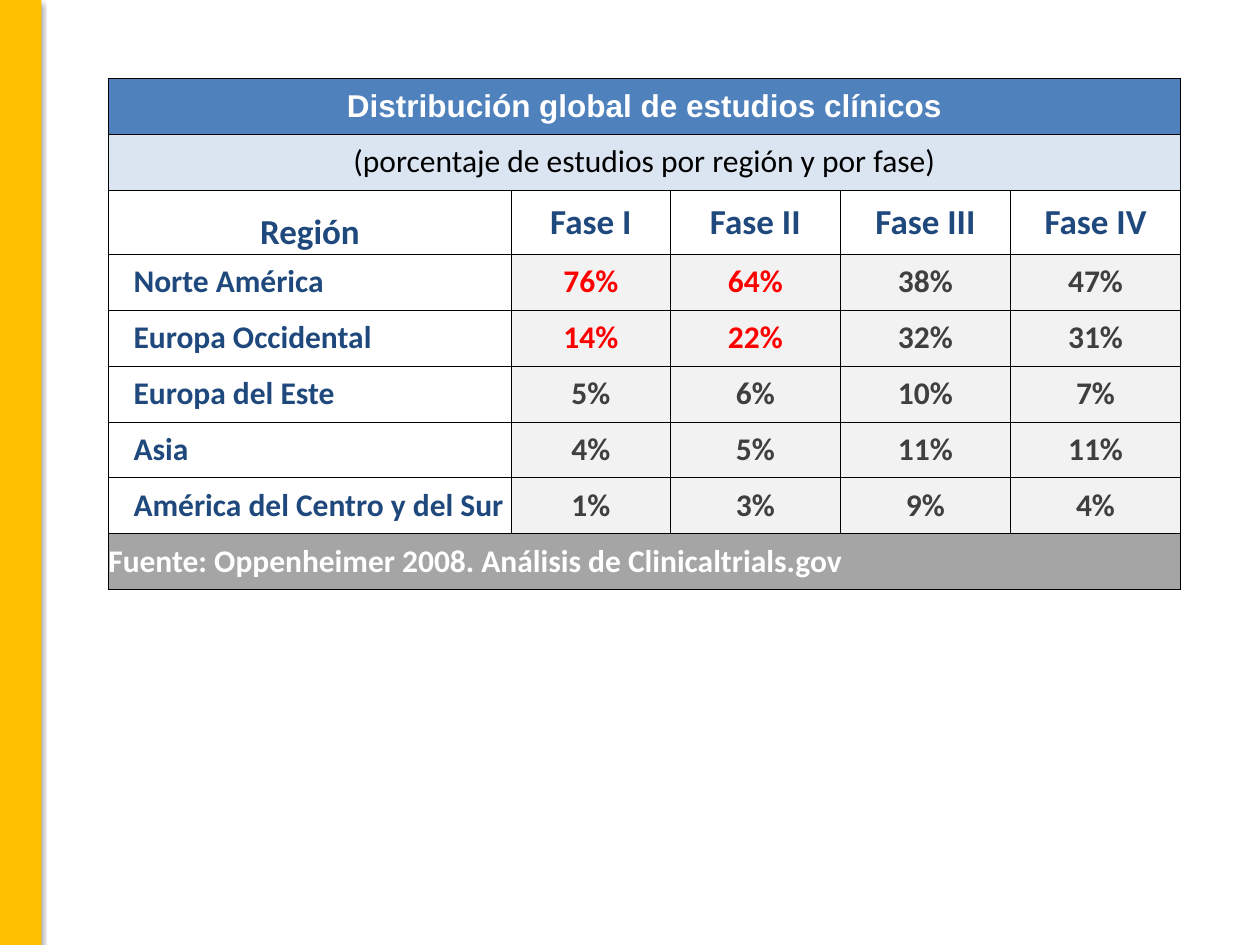
import pptx
import pptx.dml.color
import pptx.enum.shapes
import pptx.enum.text
import pptx.oxml
import pptx.oxml.ns
import pptx.util
from pptx.dml.color import RGBColor
from pptx.util import Inches

# Content
TITLE = "Distribución global de estudios clínicos"
SUBTITLE = "(porcentaje de estudios por región y por fase)"
HEADINGS = ["Región", "Fase I", "Fase II", "Fase III", "Fase IV"]
REGIONS = [
    ("Norte América", 76, 64, 38, 47),
    ("Europa Occidental", 14, 22, 32, 31),
    ("Europa del Este", 5, 6, 10, 7),
    ("Asia", 4, 5, 11, 11),
    ("América del Centro y del Sur", 1, 3, 9, 4),
]
SOURCE = "Fuente: Oppenheimer 2008. Análisis de Clinicaltrials.gov"
HIGHLIGHT_ROWS, HIGHLIGHT_COLUMNS = 2, 2

# Colours
AMBER = RGBColor(0xFF, 0xC0, 0x00)
BLUE = RGBColor(0x4F, 0x81, 0xBD)
PALE_BLUE = RGBColor(0xDB, 0xE5, 0xF1)
NAVY = RGBColor(0x1F, 0x49, 0x7D)
RED = RGBColor(0xFF, 0x00, 0x00)
DARK_GREY = RGBColor(0x3F, 0x3F, 0x3F)
GREY = RGBColor(0xA5, 0xA5, 0xA5)
PALE_GREY = RGBColor(0xF2, 0xF2, 0xF2)
WHITE = RGBColor(0xFF, 0xFF, 0xFF)
BLACK = RGBColor(0x00, 0x00, 0x00)

# Layout in inches
COLUMN_WIDTHS = [3.2, 1.26, 1.35, 1.35, 1.35]
ROW_HEIGHT, HEADING_HEIGHT = 0.444, 0.51
ROW_HEIGHTS = [ROW_HEIGHT] * 2 + [HEADING_HEIGHT] + [ROW_HEIGHT] * (len(REGIONS) + 1)
REGION_INDENT = 0.2

CENTER = pptx.enum.text.PP_ALIGN.CENTER
LEFT = pptx.enum.text.PP_ALIGN.LEFT
MIDDLE = pptx.enum.text.MSO_ANCHOR.MIDDLE
BOTTOM = pptx.enum.text.MSO_ANCHOR.BOTTOM
NAMESPACE = pptx.oxml.ns.nsdecls("a")


def add_side_band(slide, height):
    band = slide.shapes.add_shape(
        pptx.enum.shapes.MSO_SHAPE.RECTANGLE, 0, 0, Inches(0.33), height)
    band.fill.solid()
    band.fill.fore_color.rgb = AMBER
    band.line.fill.background()
    band.shadow.inherit = False
    effects = band._element.spPr.find(pptx.oxml.ns.qn("a:effectLst"))
    effects.append(pptx.oxml.parse_xml(
        f'<a:outerShdw {NAMESPACE} blurRad="{pptx.util.Pt(3.1)}" '
        f'dist="{pptx.util.Pt(1.8)}" dir="5400000" rotWithShape="0">'
        '<a:srgbClr val="000000"><a:alpha val="35000"/></a:srgbClr></a:outerShdw>'))


def add_borders(cell):
    properties = cell._tc.get_or_add_tcPr()
    for index, side in enumerate(("lnL", "lnR", "lnT", "lnB")):
        properties.insert(index, pptx.oxml.parse_xml(
            f'<a:{side} {NAMESPACE} w="{pptx.util.Pt(0.5)}"><a:solidFill>'
            f'<a:srgbClr val="{BLACK}"/></a:solidFill></a:{side}>'))


def write_cell(cell, text, color, fill=None, size=18, bold=True, font="Calibri",
               alignment=CENTER, anchor=MIDDLE, indent=0):
    cell.text_frame.text = text
    cell.vertical_anchor = anchor
    if fill is not None:
        cell.fill.solid()
        cell.fill.fore_color.rgb = fill
    paragraph = cell.text_frame.paragraphs[0]
    paragraph.alignment = alignment
    if indent:
        paragraph._p.get_or_add_pPr().set("marL", str(Inches(indent)))
    run_font = paragraph.runs[0].font
    run_font.name, run_font.size, run_font.bold = font, pptx.util.Pt(size), bold
    run_font.color.rgb = color


def add_studies_table(slide):
    frame = slide.shapes.add_table(
        len(ROW_HEIGHTS), len(COLUMN_WIDTHS), Inches(0.86), Inches(0.62),
        Inches(sum(COLUMN_WIDTHS)), Inches(sum(ROW_HEIGHTS)))
    table = frame.table
    table.first_row = table.horz_banding = False
    for column, width in zip(table.columns, COLUMN_WIDTHS):
        column.width = Inches(width)
    for row, height in zip(table.rows, ROW_HEIGHTS):
        row.height = Inches(height)

    # Plain grid with thin borders and no margins
    for cell in table.iter_cells():
        cell.margin_left = cell.margin_right = cell.margin_top = cell.margin_bottom = 0
        cell.fill.background()
        add_borders(cell)

    # Full-width rows
    last_row, last_column = len(ROW_HEIGHTS) - 1, len(COLUMN_WIDTHS) - 1
    for row in (0, 1, last_row):
        table.cell(row, 0).merge(table.cell(row, last_column))
    write_cell(table.cell(0, 0), TITLE, WHITE, BLUE, font="Arial")
    write_cell(table.cell(1, 0), SUBTITLE, BLACK, PALE_BLUE, bold=False)
    write_cell(table.cell(last_row, 0), SOURCE, WHITE, GREY, alignment=LEFT)

    # Headings
    for column, heading in enumerate(HEADINGS):
        write_cell(table.cell(2, column), heading, NAVY, size=20,
                   anchor=MIDDLE if column else BOTTOM)

    # Regions and percentages
    for index, (region, *percentages) in enumerate(REGIONS):
        row = index + 3
        write_cell(table.cell(row, 0), region, NAVY, alignment=LEFT, indent=REGION_INDENT)
        for phase, percentage in enumerate(percentages):
            highlighted = index < HIGHLIGHT_ROWS and phase < HIGHLIGHT_COLUMNS
            write_cell(table.cell(row, phase + 1), f"{percentage}%",
                       RED if highlighted else DARK_GREY, PALE_GREY)


def main():
    presentation = pptx.Presentation()
    presentation.slide_width, presentation.slide_height = Inches(10), Inches(7.5)
    slide = presentation.slides.add_slide(presentation.slide_layouts[6])
    add_side_band(slide, presentation.slide_height)
    add_studies_table(slide)
    presentation.save("out.pptx")


if __name__ == "__main__":
    main()
